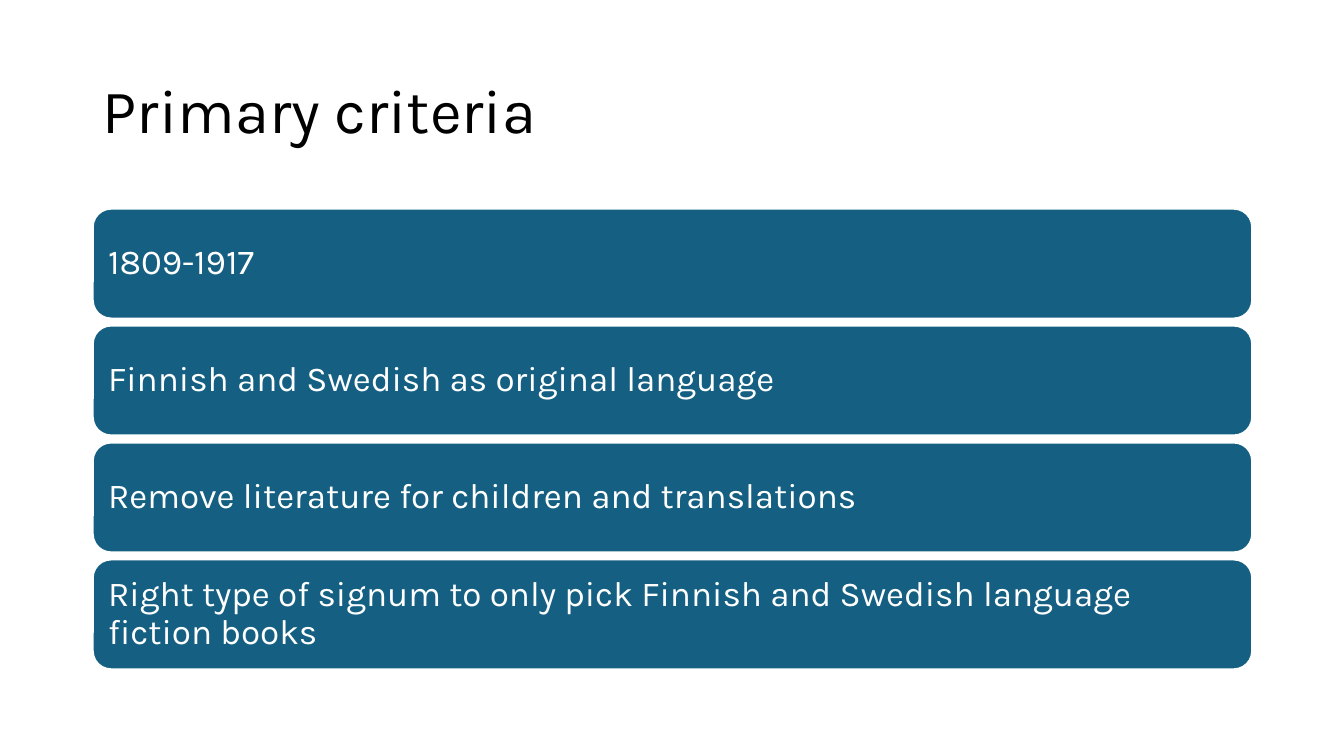
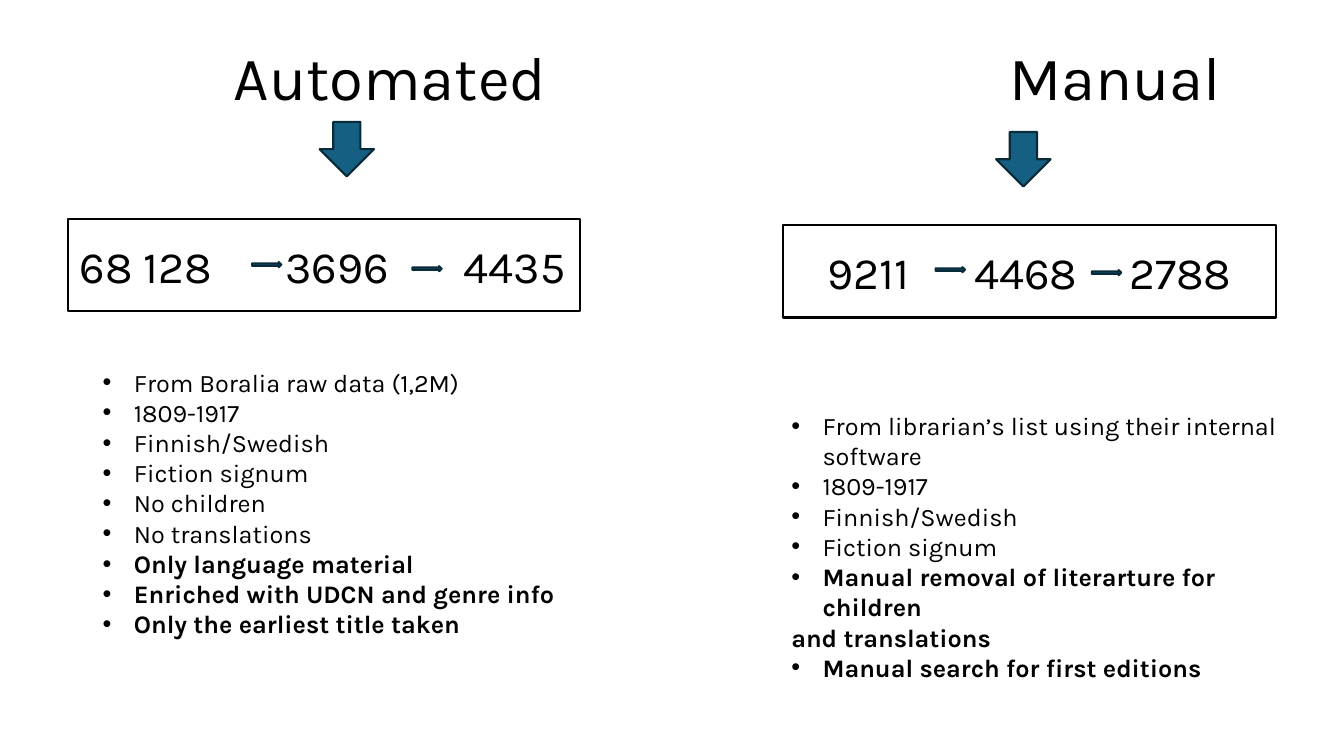
from lxml import etree
from pptx import Presentation
from pptx.dml.color import RGBColor
from pptx.enum.shapes import MSO_SHAPE
from pptx.enum.text import MSO_ANCHOR, MSO_AUTO_SIZE, PP_ALIGN
from pptx.oxml.ns import qn
from pptx.util import Emu, Pt

EMU_PER_PX = 9144  # 100 px to the inch
FONT = "Karla"
BLACK = RGBColor(0x00, 0x00, 0x00)
WHITE = RGBColor(0xFF, 0xFF, 0xFF)
BLUE = RGBColor(0x15, 0x60, 0x82)
NAVY = RGBColor(0x09, 0x2A, 0x39)

TITLE_ONLY = 5
LEFT = PP_ALIGN.LEFT
MIDDLE = MSO_ANCHOR.MIDDLE
NO_AUTOFIT = MSO_AUTO_SIZE.NONE
RECTANGLE = MSO_SHAPE.RECTANGLE
ROUNDED = MSO_SHAPE.ROUNDED_RECTANGLE
DOWN_ARROW = MSO_SHAPE.DOWN_ARROW
RIGHT_ARROW = MSO_SHAPE.RIGHT_ARROW

CRITERIA = [
    "1809-1917",
    "Finnish and Swedish as original language",
    "Remove literature for children and translations",
    "Right type of signum to only pick Finnish and Swedish language fiction books",
]
AUTOMATED_STEPS = [
    "From Boralia raw data (1,2M)",
    "1809-1917",
    "Finnish/Swedish",
    "Fiction signum",
    "No children",
    "No translations",
    "Only language material",
    "Enriched with UDCN and genre info",
    "Only the earliest title taken",
]
MANUAL_STEPS = [
    "From librarian’s list using their internal software",
    "1809-1917",
    "Finnish/Swedish",
    "Fiction signum",
    "Manual removal of literarture for children",
    "and translations",
    "Manual search for first editions",
]


def px(length):
    return Emu(length * EMU_PER_PX)


class Deck:
    """Holds the shared style and the slide being filled."""

    def __init__(self):
        self.presentation = Presentation()
        self.presentation.slide_width = px(1333)
        self.presentation.slide_height = px(750)
        self.slide = None

    def add_slide(self, title, left=92, top=40, width=1150, tabs=()):
        layout = self.presentation.slide_layouts[TITLE_ONLY]
        self.slide = self.presentation.slides.add_slide(layout)
        heading = self.slide.shapes.title
        heading.left, heading.top = px(left), px(top)
        heading.width, heading.height = px(width), px(145)
        frame = heading.text_frame
        frame.text = title
        frame.auto_size = NO_AUTOFIT
        frame.vertical_anchor = MIDDLE
        self.style(frame.paragraphs[0], 44, BLACK, spacing=0.9, tabs=tabs)

    def style(self, paragraph, size, color, bold=False, spacing=1.0, tabs=()):
        paragraph.alignment = LEFT
        paragraph.line_spacing = spacing
        if tabs:
            stops = etree.SubElement(paragraph._p.get_or_add_pPr(), qn("a:tabLst"))
            for position in tabs:
                etree.SubElement(stops, qn("a:tab"), pos=str(px(position)), algn="l")
        for run in paragraph.runs:
            run.font.name = FONT
            run.font.size = Pt(size)
            run.font.bold = bold
            run.font.color.rgb = color

    def shape(self, kind, left, top, width, height, fill=BLUE, line=NAVY):
        shape = self.slide.shapes.add_shape(
            kind, px(left), px(top), px(width), px(height))
        shape.shadow.inherit = False
        shape.fill.solid()
        shape.fill.fore_color.rgb = fill
        shape.line.color.rgb = line
        shape.line.width = Pt(1.5)
        return shape

    def band(self, text, top):
        frame = self.shape(ROUNDED, 92, top, 1150, 109, line=WHITE).text_frame
        frame.text = text
        frame.word_wrap = True
        frame.vertical_anchor = MIDDLE
        frame.margin_left = frame.margin_right = px(10)
        self.style(frame.paragraphs[0], 25, WHITE, spacing=0.9)

    def count_box(self, counts, left, top, width):
        """Draw a frame with counts, given as {count: x on the slide}."""
        first, *later = counts.values()
        frame = self.shape(RECTANGLE, left, top, width, 92, WHITE, BLACK).text_frame
        frame.text = "\t".join(counts)
        frame.word_wrap = True
        frame.vertical_anchor = MIDDLE
        frame.margin_left, frame.margin_right = px(first - left), px(0)
        self.style(frame.paragraphs[0], 32, BLACK, tabs=[x - first for x in later])

    def down_arrow(self, left, top):
        self.shape(DOWN_ARROW, left, top, 54, 54)

    def step_arrow(self, left, top):
        self.shape(RIGHT_ARROW, left, top, 29, 5)

    def steps(self, lines, left, top, height, bold_from, unbulleted=()):
        box = self.slide.shapes.add_textbox(px(left), px(top), px(533), px(height))
        frame = box.text_frame
        frame.word_wrap = True
        frame.text = "\n".join(lines)
        for index, paragraph in enumerate(frame.paragraphs):
            self.style(paragraph, 18, BLACK, bold=index >= bold_from)
            if index not in unbulleted:
                self.bullet(paragraph)

    def bullet(self, paragraph):
        properties = paragraph._p.get_or_add_pPr()
        properties.set("marL", str(px(31)))
        properties.set("indent", str(px(-31)))
        etree.SubElement(properties, qn("a:buFont"), typeface="Arial")
        etree.SubElement(properties, qn("a:buChar"), char="•")


def add_criteria(deck):
    deck.add_slide("Primary criteria")
    for row, criterion in enumerate(CRITERIA):
        deck.band(criterion, 207 + 116 * row)


def add_comparison(deck):
    deck.add_slide("Automated\tManual", left=222, top=7, width=1020, tabs=[769])
    deck.count_box({"68 128": 79, "3696": 283, "4435": 460}, 67, 217, 508)
    deck.count_box({"9211": 821, "4468": 966, "2788": 1120}, 777, 223, 489)
    for left, top in [(317, 121), (988, 131)]:
        deck.down_arrow(left, top)
    for left, top in [(250, 260), (409, 264), (928, 265), (1083, 268)]:
        deck.step_arrow(left, top)
    deck.steps(AUTOMATED_STEPS, 92, 359, 283, bold_from=6)
    deck.steps(MANUAL_STEPS, 775, 402, 252, bold_from=4, unbulleted=[5])


def main():
    deck = Deck()
    add_criteria(deck)
    add_comparison(deck)
    deck.presentation.save("out.pptx")


if __name__ == "__main__":
    main()
